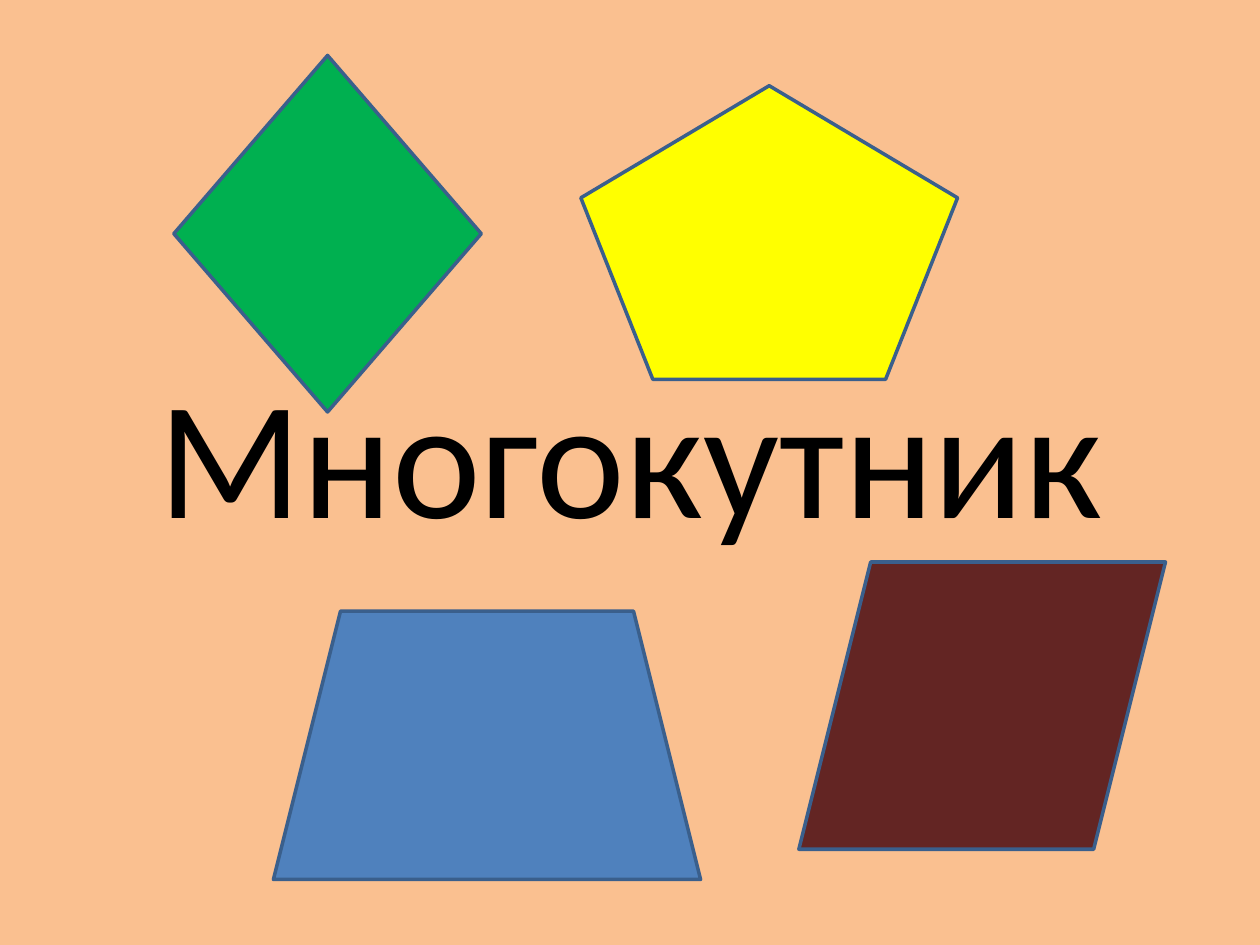
from dataclasses import dataclass

from pptx import Presentation
from pptx import util as u
from pptx.dml.color import RGBColor
from pptx.enum import shapes, text

WIDTH, HEIGHT = u.Inches(10), u.Inches(7.5)
COLORS = {
    "background": "FAC090",
    "text": "000000",
    "outline": "3A5F8C",
    "yellow": "FFFF00",
    "green": "00B050",
    "blue": "4F81BD",
    "maroon": "632523",
}


@dataclass(frozen=True)
class Box:
    left: float
    top: float
    width: float
    height: float

    def emu(self) -> tuple[int, int, int, int]:
        return (
            int(WIDTH * self.left / 100),
            int(HEIGHT * self.top / 100),
            int(WIDTH * self.width / 100),
            int(HEIGHT * self.height / 100),
        )


@dataclass(frozen=True)
class Polygon:
    kind: shapes.MSO_SHAPE
    box: Box
    color: str


TITLE_BOX = Box(5.1, 39.47, 90, 16.67)
POLYGONS = [
    Polygon(shapes.MSO_SHAPE.REGULAR_PENTAGON, Box(46.1, 9.07, 29.9, 31.07), "yellow"),
    Polygon(shapes.MSO_SHAPE.DIAMOND, Box(13.8, 5.87, 24.4, 37.73), "green"),
    Polygon(shapes.MSO_SHAPE.TRAPEZOID, Box(21.7, 64.67, 33.9, 28.4), "blue"),
    Polygon(shapes.MSO_SHAPE.PARALLELOGRAM, Box(63.4, 59.47, 29.1, 30.4), "maroon"),
]


def rgb(name: str) -> RGBColor:
    return RGBColor.from_string(COLORS[name])


def add_title(s, title: str) -> None:
    tf = s.shapes.add_textbox(*TITLE_BOX.emu()).text_frame
    tf.word_wrap = True
    tf.vertical_anchor = text.MSO_ANCHOR.MIDDLE
    p = tf.paragraphs[0]
    p.text = title
    p.alignment = text.PP_ALIGN.CENTER
    p.font.name = "Calibri"
    p.font.size = u.Pt(96)
    p.font.color.rgb = rgb("text")


def add_polygon(s, polygon: Polygon) -> None:
    sp = s.shapes.add_shape(polygon.kind, *polygon.box.emu())
    sp.shadow.inherit = False
    sp.fill.solid()
    sp.fill.fore_color.rgb = rgb(polygon.color)
    sp.line.color.rgb = rgb("outline")
    sp.line.width = u.Pt(2)


def main() -> None:
    prs = Presentation()
    prs.slide_width, prs.slide_height = WIDTH, HEIGHT
    s = prs.slides.add_slide(prs.slide_layouts[6])
    s.background.fill.solid()
    s.background.fill.fore_color.rgb = rgb("background")
    add_title(s, "Многокутник")
    for polygon in POLYGONS:
        add_polygon(s, polygon)
    prs.save("out.pptx")


if __name__ == "__main__":
    main()
